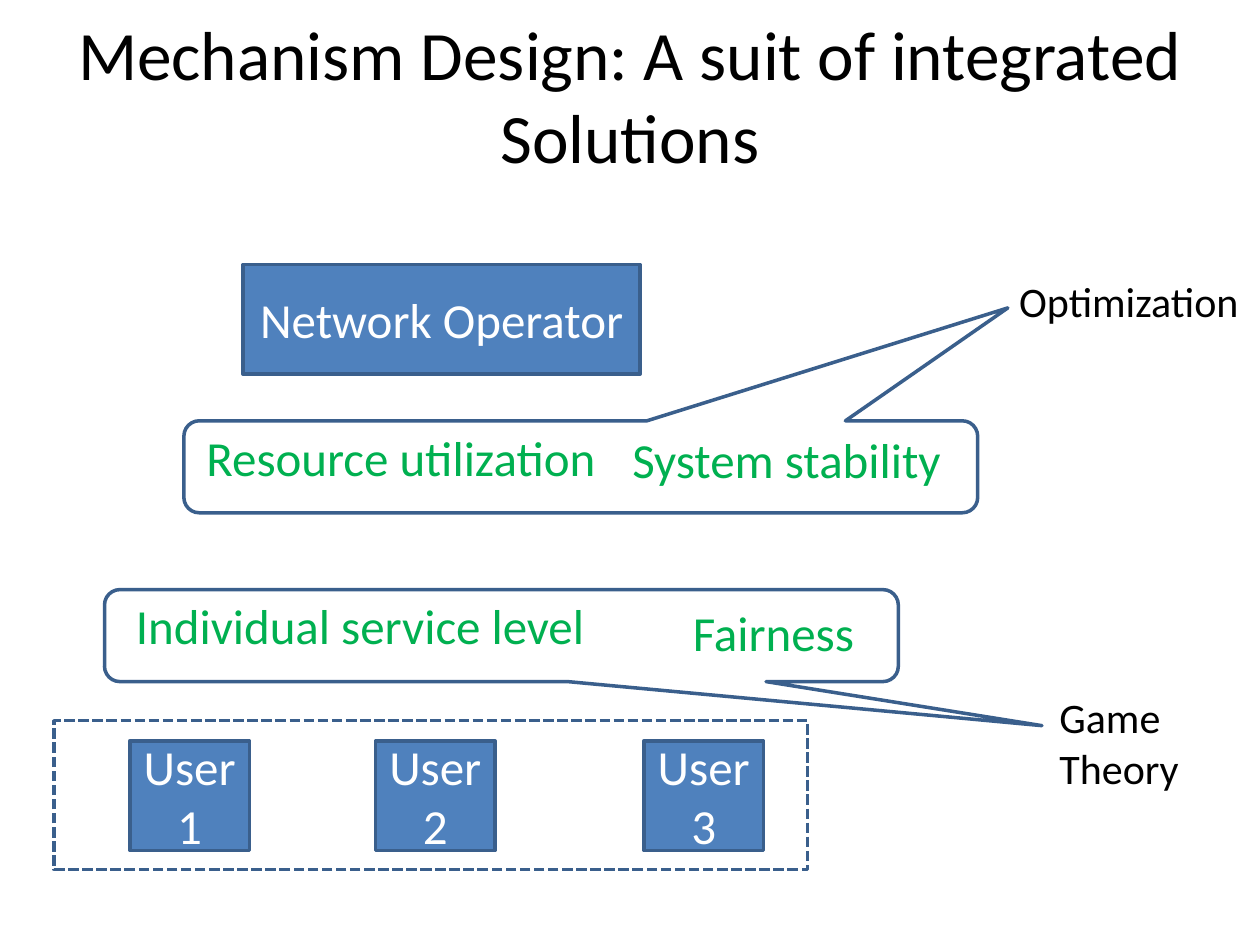
import pptx
import pptx.util
import pptx.dml.color
import pptx.enum.dml
import pptx.enum.shapes
import pptx.enum.text

Inches, Pt = pptx.util.Inches, pptx.util.Pt
Kind = pptx.enum.shapes.MSO_SHAPE
Fit = pptx.enum.text.MSO_AUTO_SIZE
Align = pptx.enum.text.PP_ALIGN
Anchor = pptx.enum.text.MSO_ANCHOR

TITLE = "Mechanism Design: A suit of integrated Solutions"
OWNER = ("Network Operator", (1.93, 2.1, 3.15, 0.87))
USERS = [("User 1", 1.03), ("User 2", 2.98), ("User 3", 5.11)]
FRAME = (0.43, 5.72, 5.98, 1.18)
GOALS = [
    {
        "box": (1.46, 3.34, 6.3, 0.73),
        "tail": (0.538, -1.728, 0.167),
        "labels": [
            ("Resource utilization", (1.54, 3.34, 3.31, 0.57)),
            ("System stability", (4.92, 3.36, 2.68, 0.57)),
        ],
    },
    {
        "box": (0.83, 4.68, 6.3, 0.73),
        "tail": (0.681, 0.979, 0.167),
        "labels": [
            ("Fairness", (5.4, 4.73, 1.57, 0.57)),
            ("Individual service level", (0.98, 4.68, 4.02, 0.57)),
        ],
    },
]
TOOLS = [
    ("Optimization", (7.99, 2.14, 1.97, 0.5)),
    ("Game Theory", (8.31, 5.44, 1.5, 0.91)),
]
COLORS = {"fill": "4F81BD", "line": "3A5F8C", "goal": "00B050",
          "text": "000000", "light": "FFFFFF"}


def tint(name):
    return pptx.dml.color.RGBColor.from_string(COLORS[name])


def write(shape, text, size, color, align=None):
    frame = shape.text_frame
    frame.text = text
    frame.word_wrap = True
    para = frame.paragraphs[0]
    para.alignment = align
    para.font.name = "Calibri"
    para.font.size = Pt(size)
    para.font.color.rgb = tint(color)


def label(parent, text, at, size, color):
    box = parent.add_textbox(*map(Inches, at))
    write(box, text, size, color)
    box.text_frame.auto_size = Fit.SHAPE_TO_FIT_TEXT


def outline(parent, kind, at):
    shape = parent.add_shape(kind, *map(Inches, at))
    shape.shadow.inherit = False
    shape.fill.background()
    shape.line.color.rgb = tint("line")
    shape.line.width = Pt(2)
    return shape


def block(parent, text, at):
    shape = outline(parent, Kind.RECTANGLE, at)
    shape.fill.solid()
    shape.fill.fore_color.rgb = tint("fill")
    write(shape, text, 28, "light", Align.CENTER)
    shape.text_frame.vertical_anchor = Anchor.MIDDLE


def main():
    deck = pptx.Presentation()
    deck.slide_width, deck.slide_height = Inches(10), Inches(7.5)
    slide = deck.slides.add_slide(deck.slide_layouts[5])
    shapes = slide.shapes

    title = shapes.title
    title.left, title.top, title.width, title.height = map(
        Inches, (0.5, 0.45, 9, 1.25))
    write(title, TITLE, 39.6, "text", Align.CENTER)
    title.text_frame.auto_size = Fit.NONE
    title.text_frame.vertical_anchor = Anchor.MIDDLE
    title.text_frame.margin_bottom = Inches(0.7)

    block(shapes, *OWNER)

    crowd = shapes.add_group_shape().shapes
    for name, left in USERS:
        block(crowd, name, (left, 5.88, 0.95, 0.87))
    frame = outline(crowd, Kind.RECTANGLE, FRAME)
    frame.line.dash_style = pptx.enum.dml.MSO_LINE.SQUARE_DOT

    for goal in GOALS:
        group = shapes.add_group_shape().shapes
        for text, at in goal["labels"]:
            label(group, text, at, 28, "goal")
        bubble = outline(group, Kind.ROUNDED_RECTANGULAR_CALLOUT, goal["box"])
        for index, value in enumerate(goal["tail"]):
            bubble.adjustments[index] = value

    for text, at in TOOLS:
        label(shapes, text, at, 24, "text")

    deck.save("out.pptx")


if __name__ == "__main__":
    main()
